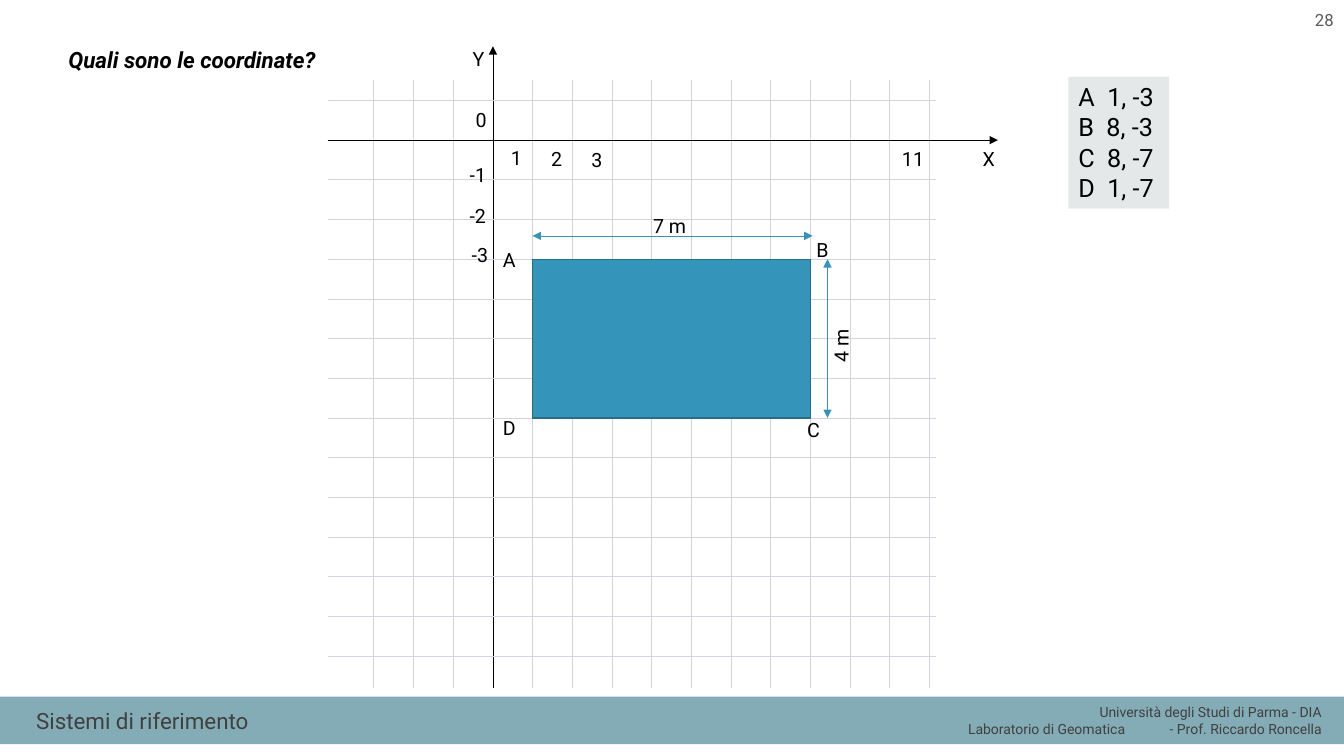
"""Slide on reference systems: a rectangle placed on a coordinate grid."""
from pptx import Presentation
from pptx.dml.color import RGBColor
from pptx.enum.shapes import MSO_CONNECTOR, MSO_SHAPE
from pptx.enum.text import MSO_ANCHOR, PP_ALIGN
from pptx.oxml.ns import qn
from pptx.util import Pt
from lxml import etree

RECT = MSO_SHAPE.RECTANGLE
STRAIGHT = MSO_CONNECTOR.STRAIGHT
LEFT, RIGHT = PP_ALIGN.LEFT, PP_ALIGN.RIGHT
TOP, MIDDLE = MSO_ANCHOR.TOP, MSO_ANCHOR.MIDDLE
FONT = "Roboto"
COLORS = {
    "black": "000000", "grid": "D4D3DD", "band": "84ACB6", "footer": "404040",
    "panel": "E4E8E8", "blue": "3494BA", "edge": "266D8A", "number": "595959",
}


def add_text(x, y, w, h, text, size=14, color="black", align=LEFT, anchor=TOP, fill=None):
    if fill:
        sp = s.shapes.add_shape(RECT, Pt(x), Pt(y), Pt(w), Pt(h))
        sp.shadow.inherit = False
        sp.fill.solid()
        sp.fill.fore_color.rgb = RGBColor.from_string(COLORS[fill])
        sp.line.fill.background()
    else:
        sp = s.shapes.add_textbox(Pt(x), Pt(y), Pt(w), Pt(h))
    tf = sp.text_frame
    tf.word_wrap = not fill
    tf.vertical_anchor = anchor
    tf.text = text
    for p in tf.paragraphs:
        p.alignment = align
        for r in p.runs:
            r.font.name = FONT
            r.font.size = Pt(size)
            r.font.color.rgb = RGBColor.from_string(COLORS[color])
    return sp


def add_line(x1, y1, x2, y2, color, arrows=()):
    cn = s.shapes.add_connector(STRAIGHT, Pt(x1), Pt(y1), Pt(x2), Pt(y2))
    cn.line.color.rgb = RGBColor.from_string(COLORS[color])
    cn.line.width = Pt(0.5)
    ln = cn.line._get_or_add_ln()
    for end in arrows:
        etree.SubElement(ln, qn(f"a:{end}")).set("type", "triangle")
    etree.SubElement(cn._element.spPr, qn("a:effectLst"))


prs = Presentation()
prs.slide_width, prs.slide_height = Pt(960), Pt(540)
s = prs.slides.add_slide(prs.slide_layouts[6])

band = s.shapes.add_shape(RECT, 0, Pt(497.6), Pt(960), Pt(33.9))
band.shadow.inherit = False
band.fill.solid()
band.fill.fore_color.rgb = RGBColor.from_string(COLORS["band"])
band.line.fill.background()
add_text(652.3, 499, 298.8, 31.7,
         "Università degli Studi di Parma - DIA\nLaboratorio di Geomatica\t- Prof. Riccardo Roncella",
         10, "footer", RIGHT)
add_text(18.7, 500.4, 523.4, 28.8, "Sistemi di riferimento", 16, "footer", anchor=MIDDLE)

question = add_text(41.8, 33.1, 259.2, 23.8, "Quali sono le coordinate?", 16)
p = question.text_frame.paragraphs[0]
p.line_spacing = 0.8
p.runs[0].font.bold = True
p.runs[0].font.italic = True

add_text(763.2, 54.7, 72, 94.3, "A  1, -3\nB  8, -3\nC  8, -7\nD  1, -7", 18, fill="panel")

STEP = 28.35
X0, Y0 = 352.1, 100.1
GRID_LEFT, GRID_TOP, GRID_SIZE = 234, 56.9, 434.9

for i in range(-3, 12):
    x = X0 + i * STEP
    add_line(x, GRID_TOP, x, GRID_TOP + GRID_SIZE, "grid" if i else "black")
add_line(X0, Y0, X0, 33.1, "black", ["tailEnd"])
for j in range(-1, 14):
    y = Y0 + j * STEP
    add_line(GRID_LEFT, y, GRID_LEFT + GRID_SIZE, y, "grid" if j else "black")
add_line(591.8, Y0, 712.8, Y0, "black", ["tailEnd"])

for x, y, w, text in [
    (332.6, 73.4, 14.4, "0"), (330.5, 30.2, 14.4, "Y"), (694.8, 101.5, 14.4, "X"),
    (328.3, 141.8, 27.4, "-2"), (329.8, 169.9, 28.8, "-3"),
    (357.8, 100.8, 14.4, "1"), (386.6, 101.5, 14.4, "2"),
    (415.4, 102.2, 14.4, "3"), (637.2, 101.5, 35.3, "11"),
]:
    add_text(x, y, w, 24.5, text)
add_text(323.3, 113, 31, 24.5, "-1", align=RIGHT)

left, top = X0 + STEP, Y0 + 3 * STEP
width, height = 7 * STEP, 4 * STEP
sp = s.shapes.add_shape(RECT, Pt(left), Pt(top), Pt(width), Pt(height))
sp.shadow.inherit = False
sp.fill.solid()
sp.fill.fore_color.rgb = RGBColor.from_string(COLORS["blue"])
sp.line.color.rgb = RGBColor.from_string(COLORS["edge"])
sp.line.width = Pt(1)

both_ends = ["headEnd", "tailEnd"]
add_line(left, 168.5, left + width + 1.5, 168.5, "blue", both_ends)
add_line(591.1, top, 591.1, top + height, "blue", both_ends)

for x, y, text, angle in [
    (352.1, 173.5, "A", 0), (576, 166.3, "B", 0), (569.5, 295.2, "C", 0),
    (352.1, 293.8, "D", 0), (459.4, 149, "7 m", 0), (567.4, 220.3, "4 m", 270),
]:
    add_text(x, y, 67, 24.5, text).rotation = angle

add_text(907.2, 0, 52.6, 28.8, "28", 12, "number", RIGHT, MIDDLE)

prs.save("out.pptx")
